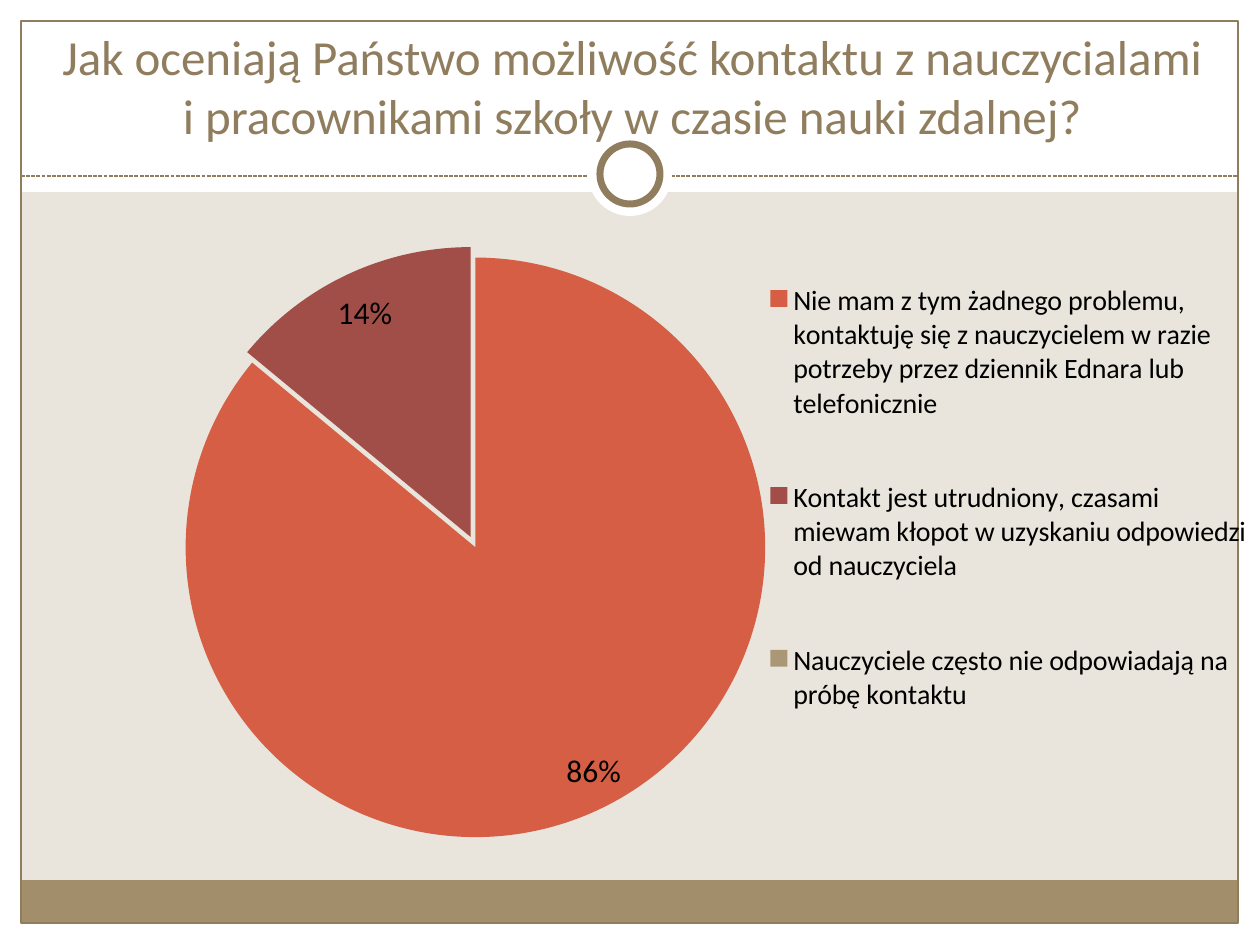
from dataclasses import dataclass

from lxml import etree
from pptx import Presentation
from pptx.chart.data import CategoryChartData
from pptx.dml.color import RGBColor
from pptx.enum.chart import XL_CHART_TYPE, XL_LABEL_POSITION, XL_LEGEND_POSITION
from pptx.enum.dml import MSO_LINE
from pptx.enum.shapes import MSO_CONNECTOR, MSO_SHAPE
from pptx.enum.text import MSO_ANCHOR, MSO_AUTO_SIZE, PP_ALIGN
from pptx.oxml import parse_xml
from pptx.oxml.ns import nsdecls, qn
from pptx.util import Pt

PIE = XL_CHART_TYPE.PIE
INSIDE_END = XL_LABEL_POSITION.INSIDE_END
LEGEND_RIGHT = XL_LEGEND_POSITION.RIGHT
DASHED = MSO_LINE.SQUARE_DOT
STRAIGHT = MSO_CONNECTOR.STRAIGHT
RECTANGLE = MSO_SHAPE.RECTANGLE
ELLIPSE = MSO_SHAPE.OVAL
BOTTOM = MSO_ANCHOR.BOTTOM
NO_AUTOFIT = MSO_AUTO_SIZE.NONE
CENTER = PP_ALIGN.CENTER

EMU_PER_PX = 914400 / 126
WIDTH, HEIGHT = 1260, 945
MARGIN = 21
TITLE_ONLY_LAYOUT = 5


@dataclass(frozen=True)
class Theme:
    background: str = "E9E5DC"
    white: str = "FFFFFF"
    accent: str = "8F7D5E"
    footer: str = "A28E6A"
    text: str = "000000"
    slices: tuple = ("D55E45", "A14E48", "A99775")
    heading_font: str = "Calibri"
    chart_font: str = "Cambria"
    title_size: int = 28
    label_size: int = 18
    legend_size: int = 16
    thin: float = 0.75
    ring: float = 4


def emu(*lengths):
    return [round(length * EMU_PER_PX) for length in lengths]


def rgb(color):
    return RGBColor.from_string(color)


def set_layout(element, successor, x, y, width, height, inner=False):
    """Place a plot area or legend by fractions of the chart."""
    for old in element.findall(qn("c:layout")):
        element.remove(old)
    target = '<c:layoutTarget val="inner"/>' if inner else ""
    element.find(qn(successor)).addprevious(parse_xml(
        f'<c:layout {nsdecls("c")}><c:manualLayout>{target}'
        '<c:xMode val="edge"/><c:yMode val="edge"/>'
        f'<c:x val="{x}"/><c:y val="{y}"/><c:w val="{width}"/><c:h val="{height}"/>'
        "</c:manualLayout></c:layout>"
    ))


def point_label(index, offset):
    """Percent label moved by fractions of the chart, or no label without an offset."""
    if offset is None:
        content = '<c:delete val="1"/>'
    else:
        x, y = offset
        content = (
            f'<c:layout><c:manualLayout><c:x val="{x}"/><c:y val="{y}"/>'
            "</c:manualLayout></c:layout>"
            '<c:numFmt formatCode="0%" sourceLinked="0"/><c:dLblPos val="inEnd"/>'
            '<c:showLegendKey val="0"/><c:showVal val="0"/><c:showCatName val="0"/>'
            '<c:showSerName val="0"/><c:showPercent val="1"/><c:showBubbleSize val="0"/>'
        )
    return parse_xml(f'<c:dLbl {nsdecls("c")}><c:idx val="{index}"/>{content}</c:dLbl>')


class SlideBuilder:
    def __init__(self, slide, theme):
        self.slide = slide
        self.theme = theme
        fill = slide.background.fill
        fill.solid()
        fill.fore_color.rgb = rgb(theme.background)

    def shape(self, kind, box, fill=None, line=None, weight=None):
        shape = self.slide.shapes.add_shape(kind, *emu(*box))
        shape.shadow.inherit = False
        if fill:
            shape.fill.solid()
            shape.fill.fore_color.rgb = rgb(fill)
        else:
            shape.fill.background()
        if line:
            shape.line.color.rgb = rgb(line)
            shape.line.width = Pt(weight)
        else:
            shape.line.fill.background()

    def circle(self, center_x, center_y, diameter, **style):
        left, top = center_x - diameter // 2, center_y - diameter // 2
        self.shape(ELLIPSE, (left, top, diameter, diameter), **style)

    def dashed_line(self, start, end):
        connector = self.slide.shapes.add_connector(STRAIGHT, *emu(*start, *end))
        connector.line.color.rgb = rgb(self.theme.accent)
        connector.line.width = Pt(self.theme.thin)
        connector.line.dash_style = DASHED
        etree.SubElement(connector._element.spPr, qn("a:effectLst"))

    def style_font(self, font, name, size, color):
        font.name = name
        font.size = Pt(size)
        font.color.rgb = rgb(color)

    def title(self, text, box):
        title = self.slide.shapes.title
        title.left, title.top, title.width, title.height = emu(*box)
        frame = title.text_frame
        frame.word_wrap = True
        frame.auto_size = NO_AUTOFIT
        frame.vertical_anchor = BOTTOM
        paragraph = frame.paragraphs[0]
        paragraph.alignment = CENTER
        run = paragraph.add_run()
        run.text = text
        theme = self.theme
        self.style_font(run.font, theme.heading_font, theme.title_size, theme.accent)
        # Bring the title in front of the frame shapes.
        self.slide.shapes._spTree.append(title._element)

    def pie(self, answers, box, explosion, label_offsets):
        theme = self.theme
        data = CategoryChartData()
        data.categories = list(answers)
        data.add_series("Series 1", list(answers.values()))
        chart = self.slide.shapes.add_chart(PIE, *emu(*box), data).chart
        chart.has_title = False
        self.style_font(chart.font, theme.chart_font, theme.label_size, theme.text)

        chart.has_legend = True
        legend = chart.legend
        legend.position = LEGEND_RIGHT
        legend.include_in_layout = False
        self.style_font(legend.font, theme.heading_font, theme.legend_size, theme.text)
        set_layout(legend._element, "c:overlay", 0.53, 0, 0.39, 0.88)
        plot_area = chart._chartSpace.chart.plotArea
        set_layout(plot_area, "c:pieChart", 0.07, 0.04, 0.46, 0.94, inner=True)

        plot = chart.plots[0]
        plot.vary_by_categories = True
        series = plot.series[0]
        for index, color in enumerate(theme.slices):
            fill = series.points[index].format.fill
            fill.solid()
            fill.fore_color.rgb = rgb(color)
        for properties in series._element.findall(qn("c:dPt") + "/" + qn("c:spPr")):
            properties.addprevious(
                parse_xml(f'<c:explosion {nsdecls("c")} val="{explosion}"/>')
            )

        labels = series.data_labels
        labels.show_percentage = True
        labels.show_value = False
        labels.number_format = "0%"
        labels.number_format_is_linked = False
        labels.position = INSIDE_END
        self.style_font(labels.font, theme.heading_font, theme.label_size, theme.text)
        for index, offset in enumerate(label_offsets):
            labels._element.insert(index, point_label(index, offset))


def main():
    theme = Theme()
    presentation = Presentation()
    presentation.slide_width, presentation.slide_height = emu(WIDTH, HEIGHT)
    layout = presentation.slide_layouts[TITLE_ONLY_LAYOUT]
    builder = SlideBuilder(presentation.slides.add_slide(layout), theme)

    right, bottom = WIDTH - MARGIN, HEIGHT - MARGIN
    header_height, rule_y, footer_height = 192, 176, 43
    inner_width, inner_height = right - MARGIN - 1, bottom - MARGIN - 1
    for band in (
        (0, bottom, WIDTH, MARGIN),
        (0, 0, WIDTH, header_height),
        (0, 0, MARGIN, HEIGHT),
        (right, 0, MARGIN, HEIGHT),
    ):
        builder.shape(RECTANGLE, band, fill=theme.white)
    footer = (MARGIN, bottom - footer_height - 1, inner_width, footer_height)
    builder.shape(RECTANGLE, footer, fill=theme.footer)
    border = (MARGIN, MARGIN, inner_width, inner_height)
    builder.shape(RECTANGLE, border, line=theme.accent, weight=theme.thin)
    builder.dashed_line((MARGIN, rule_y), (right, rule_y))
    ring_center = (WIDTH // 2, 174)
    builder.circle(*ring_center, 84, fill=theme.white)
    builder.circle(*ring_center, 60, fill=theme.white, line=theme.accent, weight=theme.ring)

    builder.title(
        "Jak oceniają Państwo możliwość kontaktu z nauczycialami "
        "i pracownikami szkoły w czasie nauki zdalnej?",
        (44, 46, 1176, 105),
    )
    answers = {
        "Nie mam z tym żadnego problemu, kontaktuję się z nauczycielem w razie "
        "potrzeby przez dziennik Ednara lub telefonicznie": 86,
        "Kontakt jest utrudniony, czasami miewam kłopot w uzyskaniu odpowiedzi "
        "od nauczyciela": 14,
        "Nauczyciele często nie odpowiadają na próbę kontaktu": 0,
    }
    label_offsets = ((0.02, -0.02), (-0.01, 0.02), None)
    builder.pie(answers, (95, 224, 1260, 624), 2, label_offsets)
    presentation.save("out.pptx")


if __name__ == "__main__":
    main()
